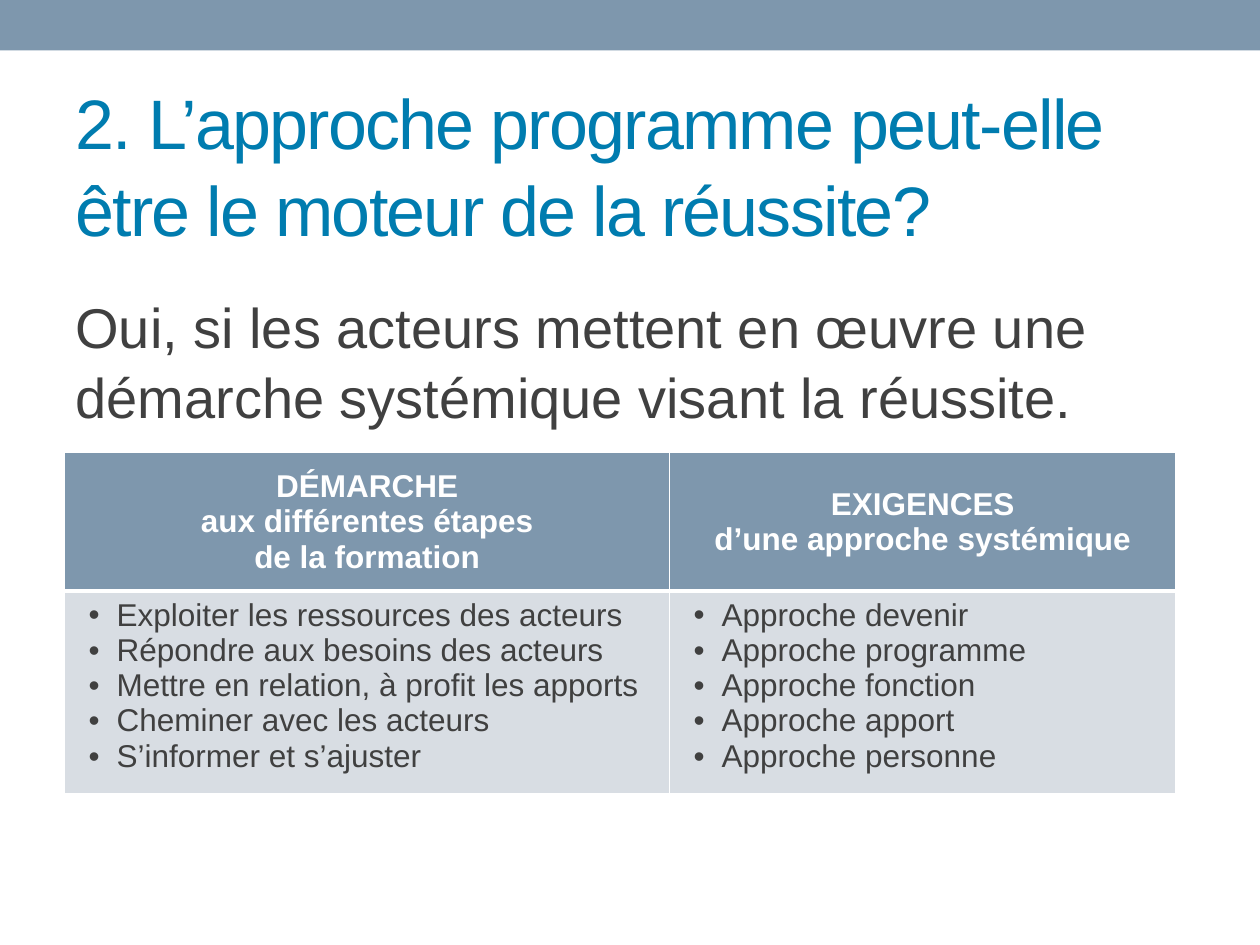
"""Build a slide on the programme approach with a two-column table."""
from dataclasses import dataclass

from lxml import etree
from pptx import Presentation
from pptx.dml.color import RGBColor
from pptx.enum import shapes, text
from pptx.oxml import ns
from pptx.util import Pt

SLATE = RGBColor(0x7E, 0x97, 0xAD)
PALE = RGBColor(0xD8, 0xDD, 0xE3)
BLUE = RGBColor(0x00, 0x7C, 0xAF)
GREY = RGBColor(0x40, 0x40, 0x40)
WHITE = RGBColor(0xFF, 0xFF, 0xFF)


@dataclass
class Column:
    width: float
    heading: list[str]
    items: list[str]


COLUMNS = [
    Column(
        345.6,
        ["DÉMARCHE", "aux différentes étapes", "de la formation"],
        [
            "Exploiter les ressources des acteurs",
            "Répondre aux besoins des acteurs",
            "Mettre en relation, à profit les apports",
            "Cheminer avec les acteurs",
            "S’informer et s’ajuster",
        ],
    ),
    Column(
        289.4,
        ["EXIGENCES", "d’une approche systémique"],
        [f"Approche {name}" for name in ("devenir", "programme", "fonction", "apport", "personne")],
    ),
]
ROW_HEIGHTS = (79.2, 116)
HEADING_FORMAT = {"size": Pt(18), "bold": True}
ITEM_FORMAT = {"size": Pt(18), "bold": False}


def write(frame, lines: list[str], color: RGBColor, font_format: dict, paragraph_format: dict) -> None:
    """Fill a text frame with one formatted paragraph per line."""
    for index, line in enumerate(lines):
        paragraph = frame.paragraphs[0] if index == 0 else frame.add_paragraph()
        run = paragraph.add_run()
        run.text = line
        run.font.color.rgb = color
        for name, value in {"name": "Arial", **font_format}.items():
            setattr(run.font, name, value)
        for name, value in paragraph_format.items():
            setattr(paragraph, name, value)


def add_bullets(frame) -> None:
    """Give every paragraph a hanging bullet."""
    for paragraph in frame.paragraphs:
        properties = paragraph._p.get_or_add_pPr()
        properties.set("marL", str(Pt(22.5)))
        properties.set("indent", str(-Pt(16)))
        etree.SubElement(properties, ns.qn("a:buFont"), typeface="Arial")
        etree.SubElement(properties, ns.qn("a:buChar"), char="•")


def format_cell(cell, fill: RGBColor, bottom_width: float) -> None:
    """Draw white borders and a solid fill."""
    properties = cell._tc.get_or_add_tcPr()
    for side, width in {"lnL": 1, "lnR": 1, "lnT": 1, "lnB": bottom_width}.items():
        line = etree.SubElement(properties, ns.qn(f"a:{side}"), w=str(Pt(width)))
        solid = etree.SubElement(line, ns.qn("a:solidFill"))
        etree.SubElement(solid, ns.qn("a:srgbClr"), val=str(WHITE))
    cell.fill.solid()
    cell.fill.fore_color.rgb = fill


def add_table(slide) -> None:
    """Add the table of steps and requirements."""
    width = sum(column.width for column in COLUMNS)
    table = slide.shapes.add_table(
        2, len(COLUMNS), Pt(37), Pt(258.6), Pt(width), Pt(sum(ROW_HEIGHTS))
    ).table
    for row, height in zip(table.rows, ROW_HEIGHTS):
        row.height = Pt(height)
    for index, column in enumerate(COLUMNS):
        table.columns[index].width = Pt(column.width)
        heading, body = table.cell(0, index), table.cell(1, index)
        heading.vertical_anchor = text.MSO_ANCHOR.MIDDLE
        write(heading.text_frame, column.heading, WHITE, HEADING_FORMAT,
              {"alignment": text.PP_ALIGN.CENTER})
        write(body.text_frame, column.items, GREY, ITEM_FORMAT, {})
        add_bullets(body.text_frame)
        format_cell(heading, SLATE, 3)
        format_cell(body, PALE, 1)


def main() -> None:
    """Assemble and save the presentation."""
    presentation = Presentation()
    presentation.slide_width, presentation.slide_height = Pt(720), Pt(540)
    slide = presentation.slides.add_slide(presentation.slide_layouts[5])

    band = slide.shapes.add_shape(shapes.MSO_SHAPE.RECTANGLE, 0, 0, Pt(720), Pt(28.8))
    band.shadow.inherit = False
    band.fill.solid()
    band.fill.fore_color.rgb = SLATE
    band.line.fill.background()

    title = slide.shapes.title
    title.left, title.top, title.width, title.height = Pt(36), Pt(41.8), Pt(648), Pt(103)
    title.text_frame.vertical_anchor = text.MSO_ANCHOR.MIDDLE
    write(title.text_frame, ["2. L’approche programme peut-elle être le moteur de la réussite?"],
          BLUE, {"size": Pt(40)}, {"alignment": text.PP_ALIGN.LEFT, "line_spacing": 1.04})
    title.text_frame.paragraphs[0].runs[0].font._element.set("spc", "-100")

    answer = slide.shapes.add_textbox(Pt(36), Pt(162), Pt(648), Pt(348))
    answer.text_frame.word_wrap = True
    write(answer.text_frame,
          ["Oui, si les acteurs mettent en œuvre une démarche systémique visant la réussite."],
          GREY, {"size": Pt(32)},
          {"space_before": Pt(6.4), "space_after": Pt(6), "line_spacing": 1.04})

    add_table(slide)
    presentation.save("out.pptx")


if __name__ == "__main__":
    main()
